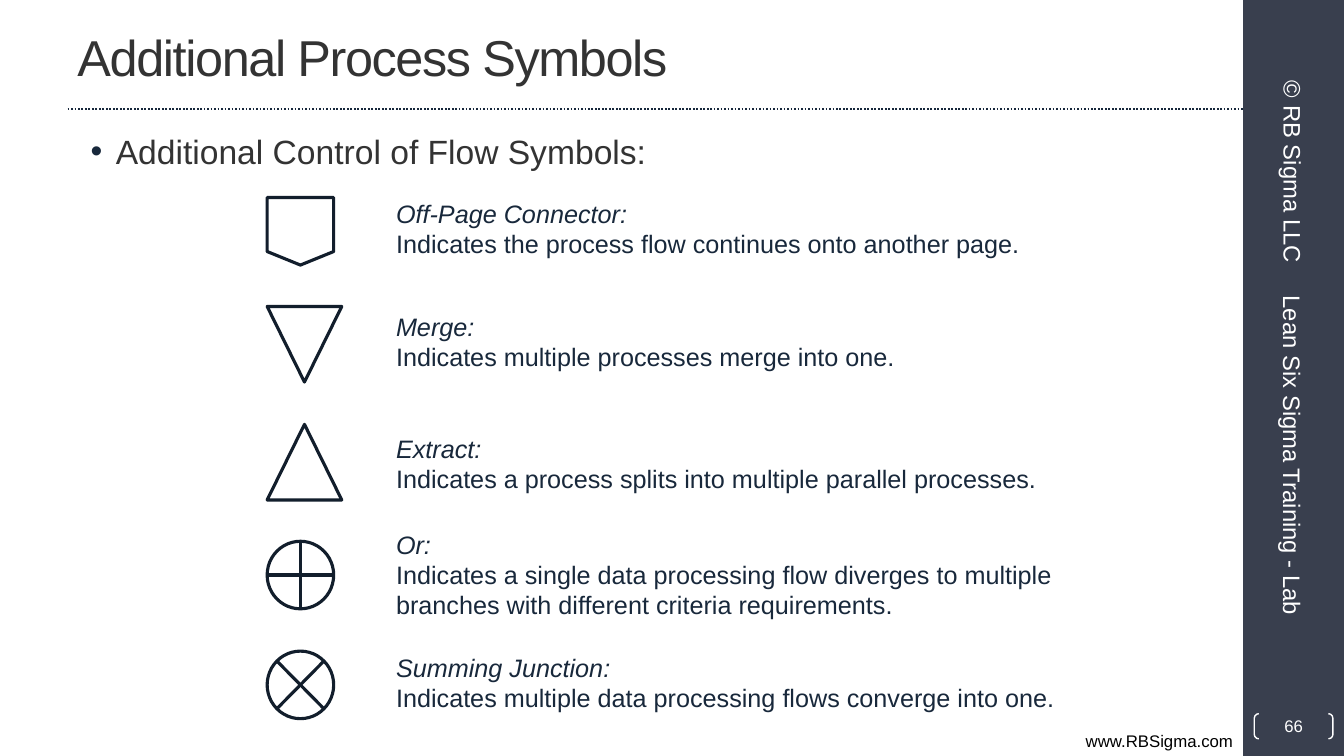
from dataclasses import dataclass

from lxml import etree
from pptx import Presentation
from pptx import util as u
from pptx.dml import color
from pptx.enum import dml, shapes, text
from pptx.oxml import ns

INK = {
    "white": "FFFFFF",
    "black": "000000",
    "band": "393F4E",
    "rule": "17273B",
    "title": "333333",
    "edge": "121E2C",
    "note": "18283B",
}
FONT = "Arial"
KIND = shapes.MSO_SHAPE
ALIGN = text.PP_ALIGN
MID = text.MSO_ANCHOR.MIDDLE


@dataclass
class Box:
    left: float
    top: float
    width: float
    height: float

    def lengths(self) -> list:
        return [u.Inches(n) for n in (self.left, self.top, self.width, self.height)]


@dataclass
class Run:
    words: str
    size: float
    ink: str
    slant: bool = False


@dataclass
class Symbol:
    kind: KIND
    top: float
    wide: bool
    note_top: float
    note_high: float
    name: str
    sense: str


@dataclass
class Label:
    box: Box
    run: Run
    align: ALIGN = ALIGN.LEFT
    anchor: text.MSO_ANCHOR = text.MSO_ANCHOR.TOP
    turn: float = 0


SYMBOLS = [
    Symbol(KIND.FLOWCHART_OFFPAGE_CONNECTOR, 1.96, False, 1.92, 0.71,
           "Off-Page Connector:",
           "Indicates the process flow continues onto another page."),
    Symbol(KIND.FLOWCHART_MERGE, 3.04, True, 3.04, 0.71,
           "Merge:", "Indicates multiple processes merge into one."),
    Symbol(KIND.FLOWCHART_EXTRACT, 4.21, True, 4.25, 0.71,
           "Extract:",
           "Indicates a process splits into multiple parallel processes."),
    Symbol(KIND.FLOWCHART_OR, 5.37, False, 5.2, 1.01,
           "Or:",
           "Indicates a single data processing flow diverges to multiple "
           "branches with different criteria requirements."),
    Symbol(KIND.FLOWCHART_SUMMING_JUNCTION, 6.46, False, 6.42, 0.71,
           "Summing Junction:",
           "Indicates multiple data processing flows converge into one."),
]

TITLE = Label(Box(0.67, 0.03, 11.11, 1.05),
              Run("Additional Process Symbols", 36, "title"), anchor=MID)
TOPIC = Label(Box(0.67, 1.25, 11.11, 6),
              Run("Additional Control of Flow Symbols:", 24, "title"))
LABELS = [
    Label(Box(0, 7.2, 12.33, 0.3), Run("www.RBSigma.com", 12, "black"), ALIGN.RIGHT),
    Label(Box(10.86, 4.53, 3.92, 0.53),
          Run("Lean Six Sigma Training - Lab", 17, "white"), anchor=MID, turn=90),
    Label(Box(11.7, 1.44, 2.25, 0.53),
          Run("© RB Sigma LLC", 17, "white"), ALIGN.CENTER, MID, 90),
]


def tint(name: str) -> color.RGBColor:
    return color.RGBColor.from_string(INK[name])


def add_run(para, run: Run):
    part = para.add_run()
    part.text = run.words
    font = part.font
    font.name = FONT
    font.size = u.Pt(run.size)
    font.italic = run.slant
    font.color.rgb = tint(run.ink)
    return part


def add_text(slide, label: Label):
    shape = slide.shapes.add_textbox(*label.box.lengths())
    shape.rotation = label.turn
    frame = shape.text_frame
    frame.word_wrap = True
    frame.vertical_anchor = label.anchor
    para = frame.paragraphs[0]
    para.alignment = label.align
    return frame, add_run(para, label.run)


def add_shape(slide, kind: KIND, box: Box, edge: str, weight: float):
    shape = slide.shapes.add_shape(kind, *box.lengths())
    shape.shadow.inherit = False
    shape.fill.background()
    shape.line.color.rgb = tint(edge)
    shape.line.width = u.Pt(weight)
    return shape


def add_frame(slide) -> None:
    band = add_shape(slide, KIND.RECTANGLE, Box(12.33, 0, 1, 7.5), "band", 1)
    band.fill.solid()
    band.fill.fore_color.rgb = tint("band")
    band.line.fill.background()
    rule = slide.shapes.add_connector(
        shapes.MSO_CONNECTOR.STRAIGHT,
        u.Inches(0.67), u.Inches(1.08), u.Inches(12.33), u.Inches(1.08))
    rule.line.color.rgb = tint("rule")
    rule.line.width = u.Pt(1.25)
    rule.line.dash_style = dml.MSO_LINE.ROUND_DOT
    etree.SubElement(rule._element.spPr, ns.qn("a:effectLst"))


def add_topic(slide) -> None:
    frame, _ = add_text(slide, TOPIC)
    props = frame.paragraphs[0]._p.get_or_add_pPr()
    props.set("marL", str(u.Inches(0.38)))
    props.set("indent", str(u.Inches(-0.25)))
    shade = etree.SubElement(props, ns.qn("a:buClr"))
    etree.SubElement(shade, ns.qn("a:srgbClr"), val=INK["note"])
    etree.SubElement(props, ns.qn("a:buFont"), typeface=FONT)
    etree.SubElement(props, ns.qn("a:buChar"), char="•")


def add_symbol(slide, sign: Symbol) -> None:
    width, height = (0.74, 0.75) if sign.wide else (0.66, 0.67)
    add_shape(slide, sign.kind, Box(2.65, sign.top, width, height), "edge", 2.25)
    note = Label(Box(3.83, sign.note_top, 7, sign.note_high),
                 Run(sign.name, 18, "note", True))
    frame, _ = add_text(slide, note)
    add_run(frame.add_paragraph(), Run(sign.sense, 18, "note"))


def add_number(slide) -> None:
    badge = add_shape(slide, KIND.DOUBLE_BRACKET,
                      Box(12.44, 7.08, 0.78, 0.25), "white", 1)
    badge.adjustments[0] = 0.18
    frame = badge.text_frame
    frame.margin_left = frame.margin_right = 0
    frame.margin_top = frame.margin_bottom = 0
    frame.vertical_anchor = MID
    para = frame.paragraphs[0]
    para.alignment = ALIGN.CENTER
    add_run(para, Run("66", 12, "white"))


def main() -> None:
    deck = Presentation()
    deck.slide_width = u.Inches(13.33)
    deck.slide_height = u.Inches(7.5)
    slide = deck.slides.add_slide(deck.slide_layouts[6])
    add_frame(slide)
    _, head = add_text(slide, TITLE)
    head.font._element.set("spc", "-100")
    add_topic(slide)
    for sign in SYMBOLS:
        add_symbol(slide, sign)
    for label in LABELS:
        add_text(slide, label)
    add_number(slide)
    deck.save("out.pptx")


if __name__ == "__main__":
    main()
